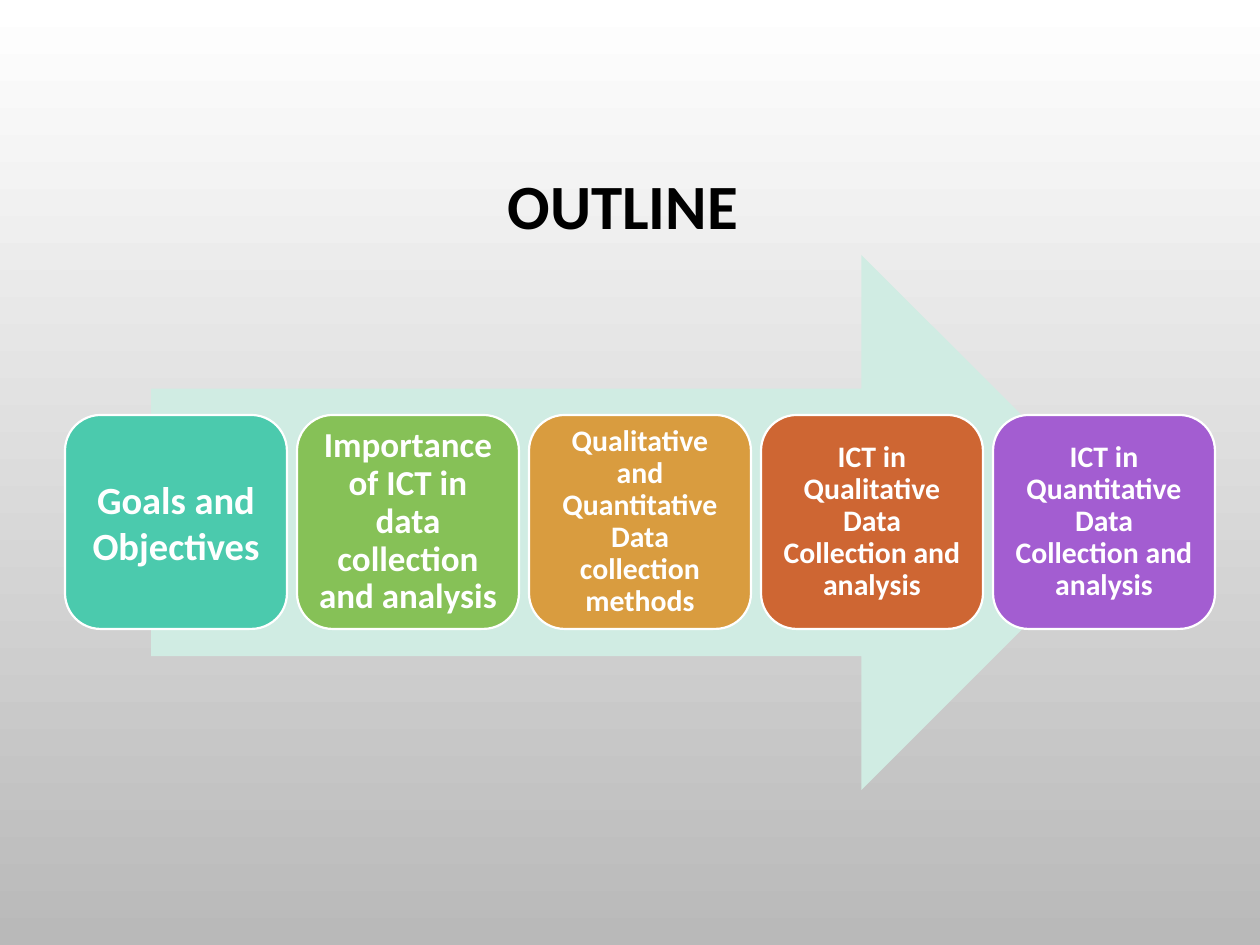
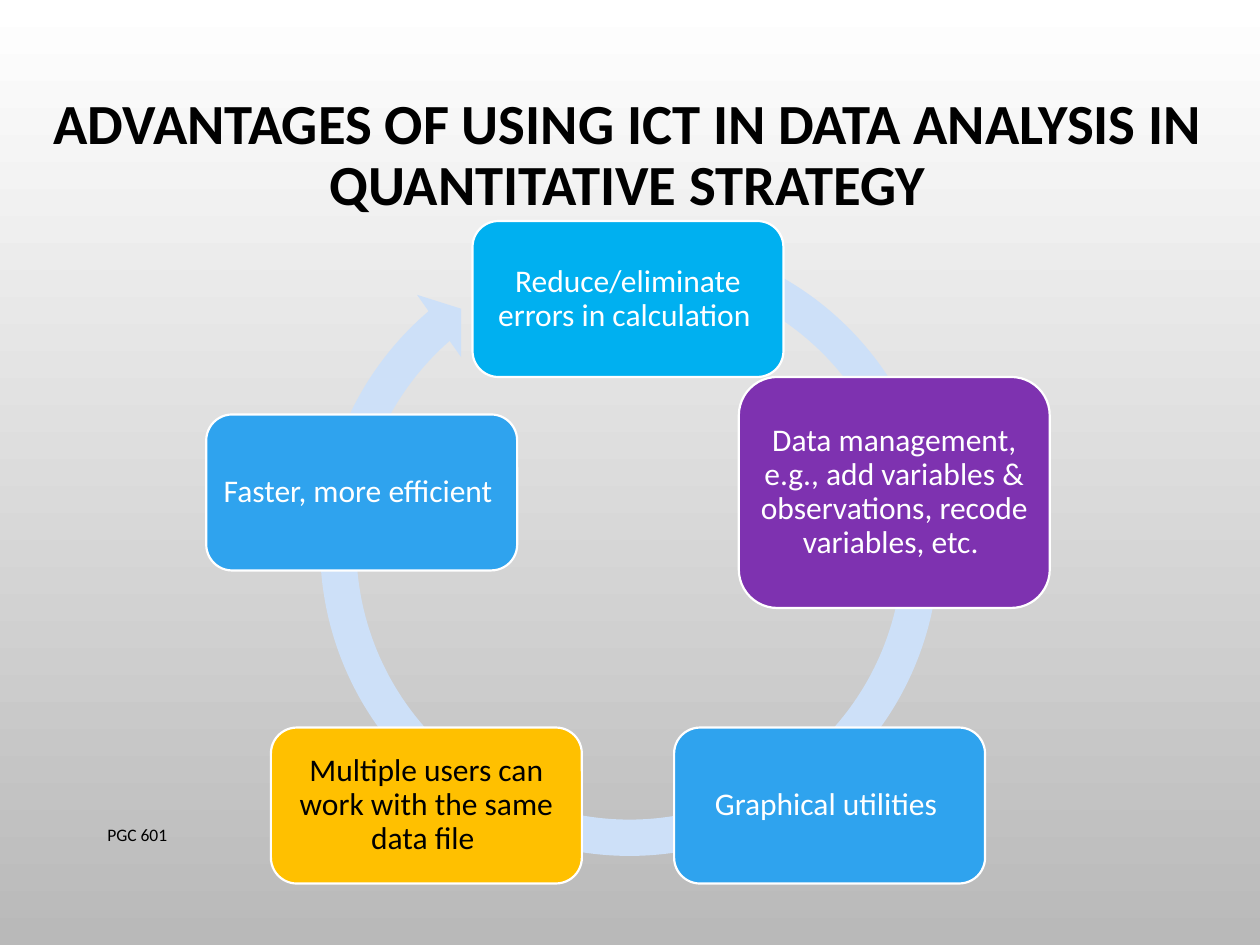
from math import cos, radians, sin

from pptx import Presentation
from pptx.dml.color import RGBColor
from pptx.enum.shapes import MSO_SHAPE as Shape
from pptx.enum.text import MSO_ANCHOR as Anchor, MSO_AUTO_SIZE as AutoSize, PP_ALIGN as Align
from pptx.util import Pt

EMU_PER_PX = 914400 / 126
SLIDE_SIZE = 1260, 945
BACKDROP = "FFFFFF", "B9B9B9"
WHITE, BLACK = "FFFFFF", "000000"
FONT = "Calibri"
TITLE_ONLY = 5

OUTLINE = {
    "title": "OUTLINE ",
    "title_box": (134, 145, 992, 129),
    "title_size": 36,
    "arrow": (151, 255, 978, 535),
    "arrow_fill": "D0ECE3",
    "steps": [
        ("Goals and Objectives", "4BCAAD", 22, 11, 1.0),
        ("Importance of ICT in data collection and analysis", "86C157", 20, 10, 0.9),
        ("Qualitative and Quantitative Data collection methods", "D99C3F", 17, 9, 0.9),
        ("ICT in Qualitative Data Collection and analysis", "CE6633", 17, 9, 0.9),
        ("ICT in Quantitative Data Collection and analysis", "A35DD1", 17, 9, 0.9),
    ],
}
STEP_LEFT, STEP_TOP, STEP_WIDTH, STEP_HEIGHT, STEP_GAP = 65, 415, 222, 214, 10

ADVANTAGES = {
    "title": "ADVANTAGES OF USING ICT IN DATA ANALYSIS IN QUANTITATIVE STRATEGY",
    "title_box": (-3, 103, 1261, 107),
    "title_size": 32.4,
    "ring": (300, 217, 659, 659),
    "ring_fill": "CDE0F8",
    "ring_angles": (0.055, 3.307, 137.512, 174.011, 0.058),
    "benefits": [
        ("Reduce/eliminate errors in calculation ", "00B0F0", WHITE, 156, 0),
        ("Data management, e.g., add variables & observations, recode variables, etc. ",
         "7E32B0", WHITE, 231, 0),
        ("Graphical utilities ", "2FA3EE", WHITE, 156, 37),
        ("Multiple users can work with the same data file ", "FFC000", BLACK, 156, -37),
        ("Faster, more efficient ", "2FA3EE", WHITE, 156, 0),
    ],
    "course": "PGC 601",
    "course_box": (95, 810, 689, 50),
}
CYCLE_X, CYCLE_Y, CYCLE_RADIUS, BENEFIT_WIDTH = 628, 579, 280, 311


def px(length):
    return round(length * EMU_PER_PX)


def paint(color_format, hex_value):
    color_format.rgb = RGBColor.from_string(hex_value)


def apply(target, values):
    for name, value in values.items():
        setattr(target, name, value)


def write(shape, text, size, color, bold=False, align=Align.CENTER, spacing=0.9, inset=None):
    frame = shape.text_frame
    apply(frame, {"word_wrap": True, "auto_size": AutoSize.NONE,
                  "vertical_anchor": Anchor.MIDDLE})
    if inset is not None:
        apply(frame, {f"margin_{side}": px(inset)
                      for side in ("left", "top", "right", "bottom")})
    frame.text = text
    paragraph = frame.paragraphs[0]
    apply(paragraph, {"alignment": align, "line_spacing": spacing})
    font = paragraph.runs[0].font
    apply(font, {"name": FONT, "size": Pt(size), "bold": bold})
    paint(font.color, color)


def add_figure(slide, preset, box, fill):
    figure = slide.shapes.add_shape(preset, *map(px, box))
    figure.shadow.inherit = False
    figure.fill.solid()
    paint(figure.fill.fore_color, fill)
    figure.line.fill.background()
    return figure


def add_card(slide, box, fill, text, size, color, **style):
    card = add_figure(slide, Shape.ROUNDED_RECTANGLE, box, fill)
    card.line.width = Pt(1.25)
    card.line.fill.solid()
    paint(card.line.fill.fore_color, WHITE)
    write(card, text, size, color, **style)


def add_titled_slide(deck, content):
    slide = deck.slides.add_slide(deck.slide_layouts[TITLE_ONLY])
    title = slide.shapes.title
    apply(title, dict(zip(("left", "top", "width", "height"), map(px, content["title_box"]))))
    write(title, content["title"], content["title_size"], BLACK, bold=True)
    return slide


def build_outline(deck):
    slide = add_titled_slide(deck, OUTLINE)
    add_figure(slide, Shape.RIGHT_ARROW, OUTLINE["arrow"], OUTLINE["arrow_fill"])
    for index, (text, fill, size, inset, spacing) in enumerate(OUTLINE["steps"]):
        left = STEP_LEFT + index * (STEP_WIDTH + STEP_GAP)
        add_card(slide, (left, STEP_TOP, STEP_WIDTH, STEP_HEIGHT), fill, text, size, WHITE,
                 bold=True, inset=inset, spacing=spacing)


def build_advantages(deck):
    slide = add_titled_slide(deck, ADVANTAGES)
    ring = add_figure(slide, Shape.CIRCULAR_ARROW, ADVANTAGES["ring"], ADVANTAGES["ring_fill"])
    for index, value in enumerate(ADVANTAGES["ring_angles"]):
        ring.adjustments[index] = value
    benefits = ADVANTAGES["benefits"]
    for index, (text, fill, color, height, nudge) in enumerate(benefits):
        angle = radians(index * 360 / len(benefits))
        left = CYCLE_X + CYCLE_RADIUS * sin(angle) + nudge - BENEFIT_WIDTH / 2
        top = CYCLE_Y - CYCLE_RADIUS * cos(angle) - height / 2
        add_card(slide, (left, top, BENEFIT_WIDTH, height), fill, text, 18, color, inset=9)
    course = slide.shapes.add_textbox(*map(px, ADVANTAGES["course_box"]))
    write(course, ADVANTAGES["course"], 10, BLACK, align=Align.LEFT, spacing=1.0)


def main():
    deck = Presentation()
    apply(deck, dict(zip(("slide_width", "slide_height"), map(px, SLIDE_SIZE))))
    backdrop = deck.slide_master.background.fill
    backdrop.gradient()
    backdrop.gradient_angle = 270
    for stop, color in zip(backdrop.gradient_stops, BACKDROP):
        paint(stop.color, color)
    build_outline(deck)
    build_advantages(deck)
    deck.save("out.pptx")


if __name__ == "__main__":
    main()
